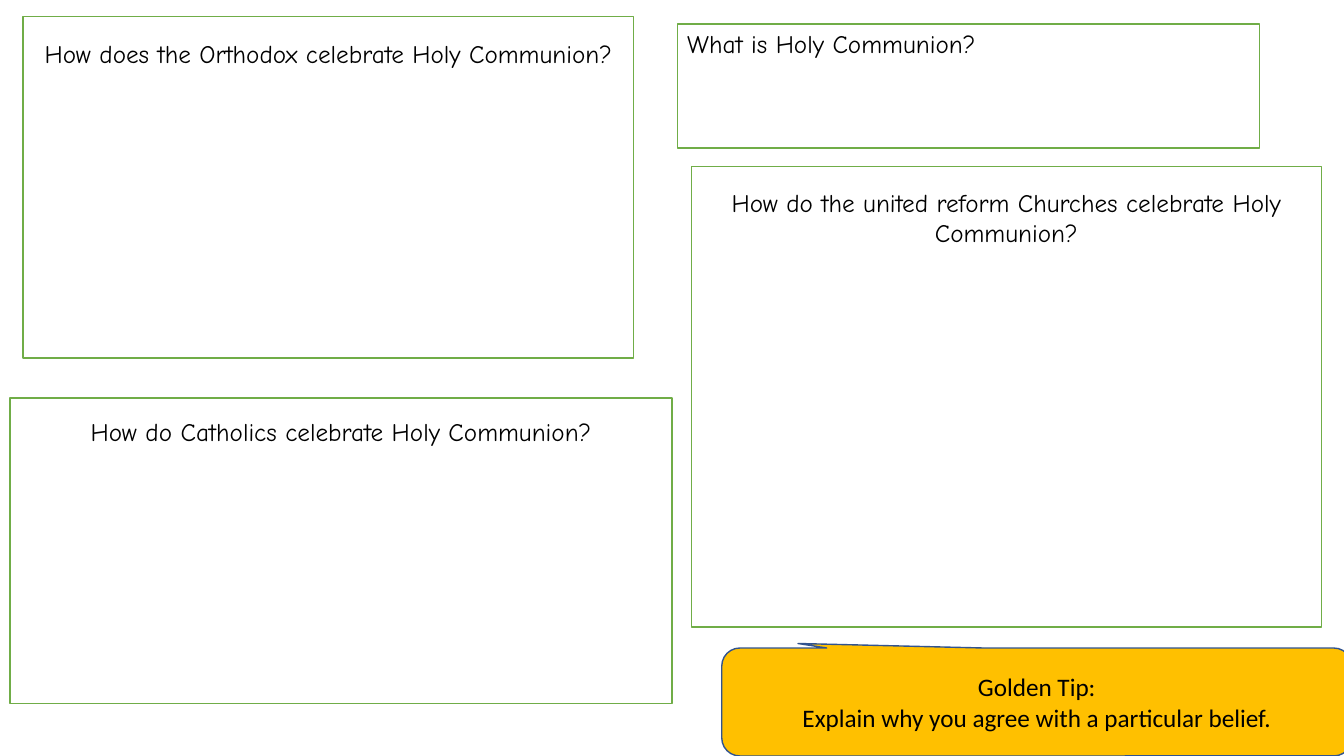
from pptx import Presentation
from pptx.dml.color import RGBColor
from pptx.enum.shapes import MSO_SHAPE
from pptx.enum.text import MSO_ANCHOR, PP_ALIGN
from pptx.util import Cm, Pt

RECTANGLE = MSO_SHAPE.RECTANGLE
CALLOUT = MSO_SHAPE.ROUNDED_RECTANGULAR_CALLOUT
TOP, MIDDLE = MSO_ANCHOR.TOP, MSO_ANCHOR.MIDDLE
LEFT, CENTER = PP_ALIGN.LEFT, PP_ALIGN.CENTER

QUESTIONS = [
    ("How does the Orthodox celebrate Holy Communion?", (0.58, 0.41, 15.39, 8.61), CENTER, 0.56),
    ("How do the united reform Churches celebrate Holy Communion?", (17.42, 4.19, 15.88, 11.61), CENTER, 0.52),
    ("How do Catholics celebrate Holy Communion?", (0.25, 10.03, 16.69, 7.7), CENTER, 0.46),
    ("What is Holy Communion?", (17.07, 0.61, 14.68, 3.12), LEFT, 0.1),
]
TIP_LINES = ["Golden Tip:", "Explain why you agree with a particular belief."]
TIP_BOX = (18.19, 16.33, 15.88, 2.72)
TIP_ADJUSTMENTS = (-0.379, -0.542, 0.167)


def color(value):
    return RGBColor.from_string(value)


def add_box(slide, kind, box, fill, line):
    shape = slide.shapes.add_shape(kind, *map(Cm, box))
    shape.shadow.inherit = False
    shape.fill.solid()
    shape.fill.fore_color.rgb = color(fill)
    shape.line.color.rgb = color(line)
    shape.line.width = Pt(1)
    return shape


def write_text(shape, lines, font, align=CENTER, anchor=MIDDLE, top=0.13):
    frame = shape.text_frame
    frame.word_wrap = True
    frame.vertical_anchor = anchor
    frame.margin_left = frame.margin_right = Cm(0.25)
    frame.margin_top, frame.margin_bottom = Cm(top), Cm(0.13)
    for index, line in enumerate(lines):
        paragraph = frame.add_paragraph() if index else frame.paragraphs[0]
        paragraph.alignment = align
        run = paragraph.add_run()
        run.text = line
        run.font.name = font
        run.font.size = Pt(18)
        run.font.color.rgb = color("000000")


def main():
    presentation = Presentation()
    presentation.slide_width, presentation.slide_height = Cm(33.87), Cm(19.05)
    slide = presentation.slides.add_slide(presentation.slide_layouts[6])

    for question, box, align, top in QUESTIONS:
        panel = add_box(slide, RECTANGLE, box, "FFFFFF", "70AD47")
        write_text(panel, [question], "Comic Neue", align=align, anchor=TOP, top=top)

    tip = add_box(slide, CALLOUT, TIP_BOX, "FFC000", "31538F")
    for index, value in enumerate(TIP_ADJUSTMENTS):
        tip.adjustments[index] = value
    write_text(tip, TIP_LINES, "Calibri")

    presentation.save("out.pptx")


if __name__ == "__main__":
    main()
